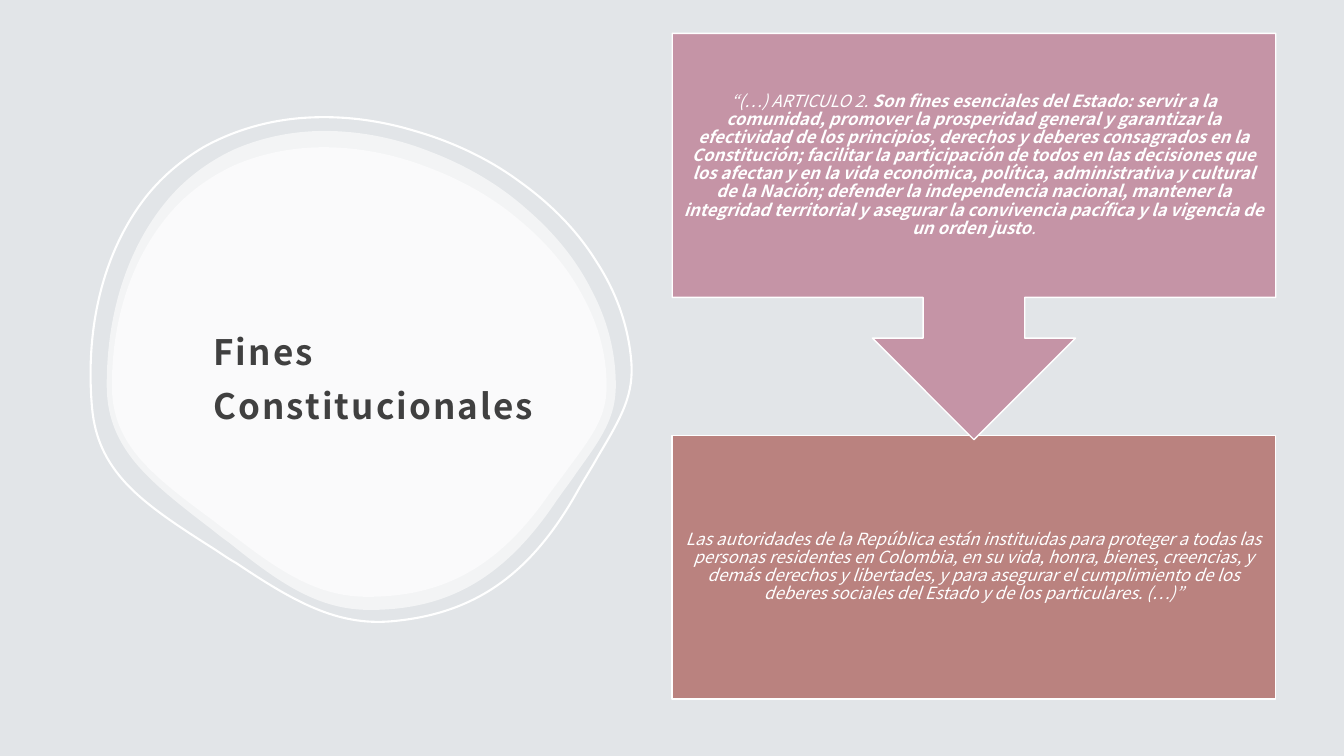
from lxml.etree import SubElement
from pptx import Presentation
from pptx.dml.color import RGBColor
from pptx.enum.shapes import MSO_SHAPE as Preset
from pptx.enum.text import MSO_ANCHOR as Anchor, MSO_AUTO_SIZE as AutoSize, PP_ALIGN as Align
from pptx.oxml.ns import qn
from pptx.util import Cm, Pt

FONT = "Noto Sans CJK JP"
BACKGROUND = RGBColor(0xE2, 0xE5, 0xE8)
WHITE = RGBColor(0xFF, 0xFF, 0xFF)
DARK = RGBColor(0x40, 0x40, 0x40)
PINK = RGBColor(0xC5, 0x94, 0xA6)
BROWN = RGBColor(0xBA, 0x82, 0x7F)

# Pebble outline on a 505 by 475 grid: a start, then three points per Bézier curve.
PEBBLE_SIZE = (505, 475)
PEBBLE = [
    (216, 0),
    (183, 0), (152, 7), (125, 19),
    (100, 31), (77, 48), (59, 70),
    (21, 116), (0, 180), (0, 252),
    (0, 280), (8, 303), (26, 326),
    (45, 350), (74, 372), (104, 395),
    (109, 399), (115, 404), (121, 408),
    (172, 449), (210, 475), (261, 475),
    (339, 475), (395, 443), (446, 367),
    (453, 357), (460, 348), (466, 339),
    (492, 303), (505, 284), (505, 252),
    (505, 220), (497, 188), (481, 158),
    (466, 128), (444, 101), (416, 77),
    (389, 53), (356, 34), (322, 21),
    (287, 7), (251, 0), (216, 0),
]

TITLE = "Fines Constitucionales"
PURPOSES = [
    ("“(…) ARTICULO 2. ", False),
    ("Son fines esenciales del Estado: servir a la comunidad, promover la prosperidad "
     "general y garantizar la efectividad de los principios, derechos y deberes consagrados "
     "en la Constitución; facilitar la participación de todos en las decisiones que los "
     "afectan y en la vida económica, política, administrativa y cultural de la Nación; "
     "defender la independencia nacional, mantener la integridad territorial y asegurar la "
     "convivencia pacífica y la vigencia de un orden justo", True),
    (".", False),
]
AUTHORITIES = [
    ("Las autoridades de la República están instituidas para proteger a todas las personas "
     "residentes en Colombia, en su vida, honra, bienes, creencias, y demás derechos y "
     "libertades, y para asegurar el cumplimiento de los deberes sociales del Estado y de "
     "los particulares. (…)”", False),
]


def add_pebble(slide, left, top, width, height):
    scale = (width / PEBBLE_SIZE[0], height / PEBBLE_SIZE[1])
    builder = slide.shapes.build_freeform(*PEBBLE[0], scale=scale)
    builder.add_line_segments(PEBBLE[1:], close=True)
    pebble = builder.convert_to_shape(left, top)
    pebble.shadow.inherit = False
    curve_segments(pebble)
    return pebble


def curve_segments(shape):
    """Turn every three line segments of a freeform into one Bézier curve."""
    outline = next(shape._element.iter(qn("a:path")))
    lines = outline.findall(qn("a:lnTo"))
    close = outline.find(qn("a:close"))
    for start in range(0, len(lines), 3):
        curve = SubElement(outline, qn("a:cubicBezTo"))
        for line in lines[start:start + 3]:
            curve.append(line[0])
            outline.remove(line)
    outline.append(close)


def fill_translucent(shape, percent):
    shape.fill.solid()
    shape.fill.fore_color.rgb = WHITE
    color = next(shape._element.spPr.iter(qn("a:srgbClr")))
    SubElement(color, qn("a:alpha")).set("val", str(percent * 1000))
    shape.line.fill.background()


def add_title_pebble(slide, left, top, width, height):
    """Two translucent pebbles, a tilted outline around them and the title."""
    back = add_pebble(slide, left + Cm(0.43), top + Cm(0.43), Cm(12.83), Cm(12.07))
    front = add_pebble(slide, left + Cm(0.56), top + Cm(0.84), Cm(12.47), Cm(11.33))
    for pebble in (back, front):
        fill_translucent(pebble, 60)

    outline = add_pebble(slide, left, top, width, height)
    outline.fill.background()
    outline.line.color.rgb = WHITE
    outline.line.width = Pt(1.5)
    outline.rotation = -5

    title = slide.shapes.title
    slide.shapes._spTree.append(title._element)
    title.left, title.top = left + Cm(2.82), top + Cm(2.41)
    title.width, title.height = Cm(9.2), Cm(8.15)
    frame = title.text_frame
    frame.text = TITLE
    frame.word_wrap = True
    frame.auto_size = AutoSize.NONE
    frame.vertical_anchor = Anchor.MIDDLE
    frame.margin_left = frame.margin_right = frame.margin_top = Cm(0.3)
    frame.margin_bottom = Cm(0.25)
    para = frame.paragraphs[0]
    para.alignment = Align.LEFT
    para.line_spacing = 1.3
    para.font.name, para.font.size, para.font.bold = FONT, Pt(25), True
    para.font.color.rgb = DARK
    para.runs[0].font._element.set("spc", "150")


def add_panel(slide, preset, color, left, top, width, height):
    panel = slide.shapes.add_shape(preset, left, top, width, height)
    panel.shadow.inherit = False
    panel.fill.solid()
    panel.fill.fore_color.rgb = color
    panel.line.color.rgb = WHITE
    panel.line.width = Pt(1)
    return panel


def write_article(shape, spans):
    frame = shape.text_frame
    frame.word_wrap = True
    frame.vertical_anchor = Anchor.MIDDLE
    frame.margin_left = frame.margin_right = Cm(0.23)
    frame.margin_top = frame.margin_bottom = Cm(0.23)
    para = frame.paragraphs[0]
    para.alignment = Align.CENTER
    para.line_spacing = 0.9
    para.font.name, para.font.size, para.font.italic = FONT, Pt(12), True
    para.font.color.rgb = WHITE
    for text, bold in spans:
        span = para.add_run()
        span.text = text
        span.font.bold = bold


def add_article_flow(slide, left, top, width, height):
    """A callout whose arrow points down to a second panel of the same height."""
    panel_height = Cm(6.65)
    lower_top = top + height - panel_height
    lower = add_panel(slide, Preset.RECTANGLE, BROWN, left, lower_top, width, panel_height)
    write_article(lower, AUTHORITIES)

    callout = add_panel(slide, Preset.UP_ARROW_CALLOUT, PINK, left, top, width, Cm(10.24))
    callout.rotation = 180
    # The text has its own box so that it stays upright on the turned callout.
    write_article(slide.shapes.add_textbox(left, top, width, panel_height), PURPOSES)


def main():
    deck = Presentation()
    deck.slide_width, deck.slide_height = Cm(33.87), Cm(19.05)
    slide = deck.slides.add_slide(deck.slide_layouts[5])
    slide.background.fill.solid()
    slide.background.fill.fore_color.rgb = BACKGROUND
    add_title_pebble(slide, Cm(2.26), Cm(2.87), Cm(13.64), Cm(12.83))
    add_article_flow(slide, Cm(16.94), Cm(0.84), Cm(15.21), Cm(16.78))
    deck.save("out.pptx")


if __name__ == "__main__":
    main()
